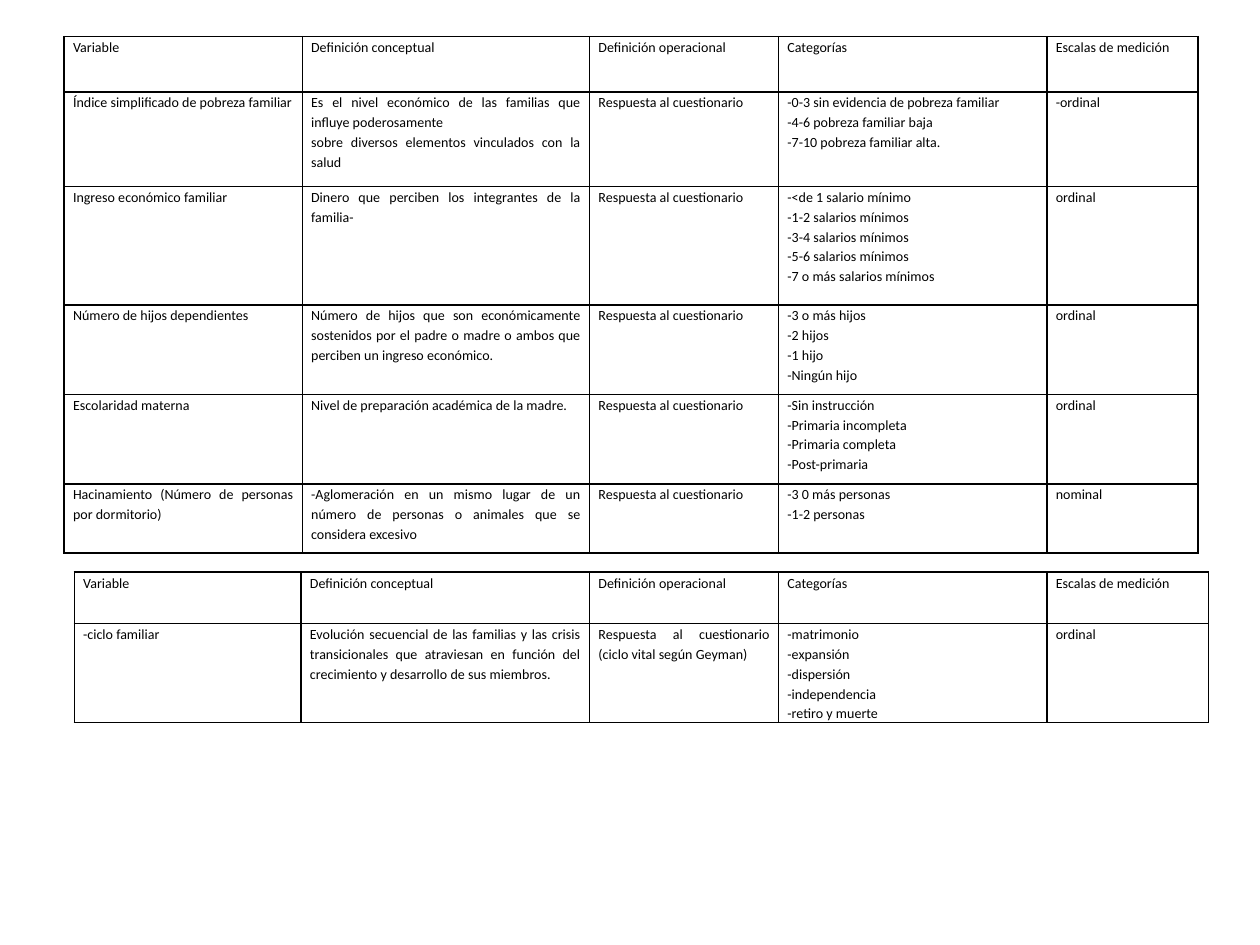
from lxml import etree
from pptx import Presentation
from pptx.dml.color import RGBColor
from pptx.enum import text
from pptx.oxml import ns
from pptx.util import Inches, Pt

COLORS = {"ink": "000000"}
HEADER = ["Variable", "Definición conceptual", "Definición operacional",
          "Categorías", "Escalas de medición"]
ANSWER = "Respuesta al cuestionario"

# Each table: left, top, column widths, row heights, body rows
TABLES = [
    (0.51, 0.29, [1.89, 2.28, 1.5, 2.13, 1.2], [0.44, 0.75, 0.94, 0.71, 0.71, 0.55], [
        ["Índice simplificado de pobreza familiar",
         "Es el nivel económico de las familias que influye poderosamente\n"
         "sobre diversos elementos vinculados con la salud",
         ANSWER,
         "-0-3 sin evidencia de pobreza familiar\n-4-6 pobreza familiar baja\n"
         "-7-10 pobreza familiar alta.",
         "-ordinal"],
        ["Ingreso económico familiar",
         "Dinero que perciben los integrantes de la familia-",
         ANSWER,
         "-<de 1 salario mínimo\n-1-2 salarios mínimos\n-3-4 salarios mínimos\n"
         "-5-6 salarios mínimos\n-7 o más salarios mínimos",
         "ordinal"],
        ["Número de hijos dependientes",
         "Número de hijos que son económicamente sostenidos por el padre o madre "
         "o ambos que perciben un ingreso económico.",
         ANSWER,
         "-3 o más hijos\n-2 hijos\n-1 hijo\n-Ningún hijo",
         "ordinal"],
        ["Escolaridad materna",
         "Nivel de preparación académica de la madre.",
         ANSWER,
         "-Sin instrucción\n-Primaria incompleta\n-Primaria completa\n-Post-primaria",
         "ordinal"],
        ["Hacinamiento (Número de personas por dormitorio)",
         "-Aglomeración en un mismo lugar de un número de personas o animales "
         "que se considera excesivo",
         ANSWER,
         "-3 0 más personas\n-1-2 personas",
         "nominal"],
    ]),
    (0.59, 4.54, [1.8, 2.29, 1.5, 2.13, 1.28], [0.41, 0.78], [
        ["-ciclo familiar",
         "Evolución secuencial de las familias y las crisis transicionales que "
         "atraviesan en función del crecimiento y desarrollo de sus miembros.",
         "Respuesta al cuestionario (ciclo vital según Geyman)",
         "-matrimonio\n-expansión\n-dispersión\n-independencia\n-retiro y muerte",
         "ordinal"],
    ]),
]


def add_borders(cell):
    tc_pr = cell._tc.get_or_add_tcPr()
    for side in ("lnL", "lnR", "lnT", "lnB"):
        ln = etree.SubElement(tc_pr, ns.qn(f"a:{side}"), w=str(Pt(1)))
        fill = etree.SubElement(ln, ns.qn("a:solidFill"))
        etree.SubElement(fill, ns.qn("a:srgbClr"), val=COLORS["ink"])


def fill_cell(cell, content):
    cell.text = content
    cell.margin_left = cell.margin_right = Inches(0.07)
    cell.margin_top = cell.margin_bottom = 0
    add_borders(cell)
    cell.fill.background()
    for p in cell.text_frame.paragraphs:
        p.alignment = text.PP_ALIGN.JUSTIFY
        p.line_spacing = 1.15
        p.font.name = "Calibri"
        p.font.size = Pt(8)
        p.font.color.rgb = RGBColor.from_string(COLORS["ink"])


prs = Presentation()
prs.slide_width, prs.slide_height = Inches(10), Inches(7.5)
s = prs.slides.add_slide(prs.slide_layouts[6])

for left, top, widths, heights, body in TABLES:
    table = s.shapes.add_table(len(heights), len(widths), Inches(left), Inches(top),
                               Inches(sum(widths)), Inches(sum(heights))).table
    table.first_row = table.horz_banding = False
    for column, width in zip(table.columns, widths):
        column.width = Inches(width)
    for row, height, contents in zip(table.rows, heights, [HEADER] + body):
        row.height = Inches(height)
        for cell, content in zip(row.cells, contents):
            fill_cell(cell, content)

prs.save("out.pptx")
